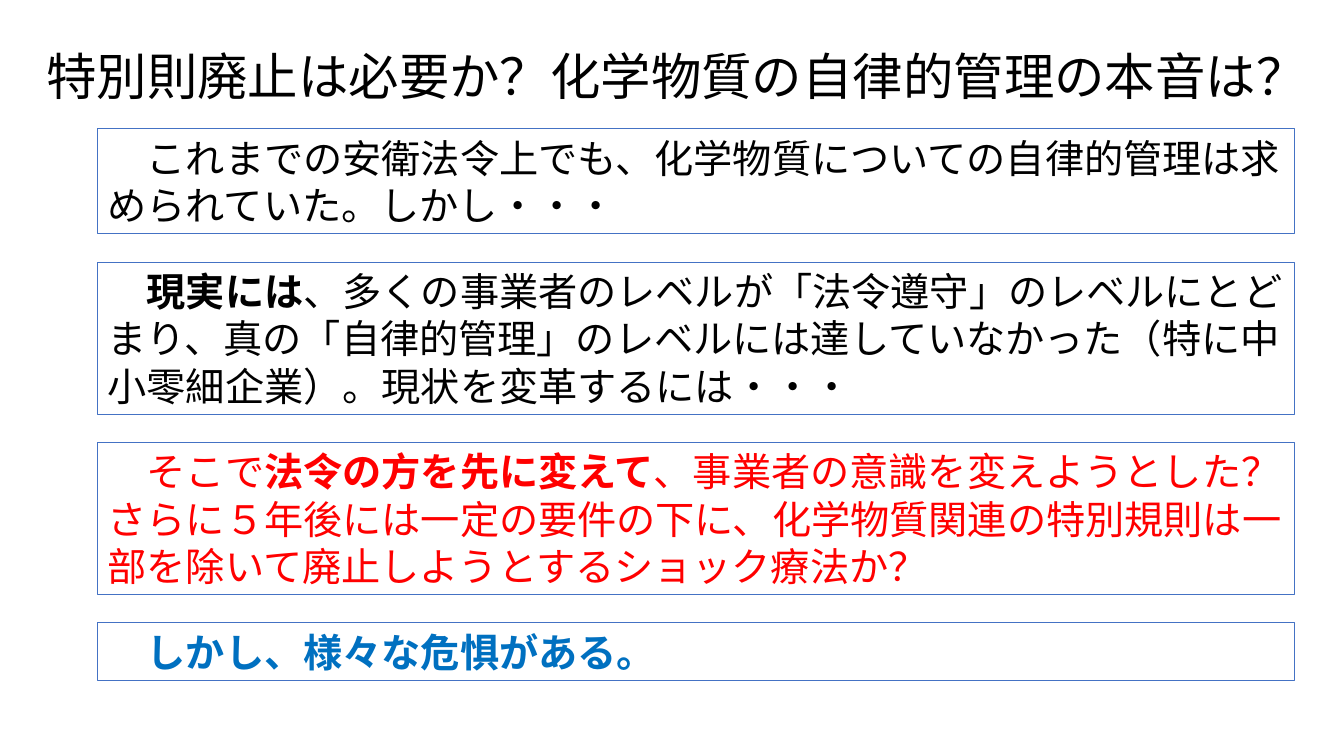
from pptx import Presentation
from pptx.dml.color import RGBColor
from pptx.enum.shapes import MSO_SHAPE
from pptx.enum.text import MSO_ANCHOR, MSO_AUTO_SIZE, PP_ALIGN
from pptx.oxml.ns import qn
from pptx.util import Inches, Pt
from lxml.etree import SubElement

THEME = {
    "font": "Noto Sans CJK JP",
    "black": RGBColor(0x00, 0x00, 0x00),
    "red": RGBColor(0xFF, 0x00, 0x00),
    "blue": RGBColor(0x00, 0x70, 0xC0),
    "border": RGBColor(0x44, 0x72, 0xC4),
    "title_size": Pt(36),
    "body_size": Pt(28),
    "body_leading": Pt(33.8),
}


def add_span(para, text, size, color, bold=False):
    span = para.add_run()
    span.text = text
    span.font.size = size
    span.font.bold = bold
    span.font.color.rgb = THEME[color]
    span.font.name = THEME["font"]
    # East Asian text takes its typeface from a separate element
    SubElement(span.font._element, qn("a:ea"), typeface=THEME["font"])


deck = Presentation()
deck.slide_width, deck.slide_height = Inches(13.33), Inches(7.5)
page = deck.slides.add_slide(deck.slide_layouts[6])

# Title
title = page.shapes.add_textbox(Inches(0.36), Inches(0.32), Inches(12.75), Inches(0.93))
title.text_frame.word_wrap = True
title.text_frame.vertical_anchor = MSO_ANCHOR.MIDDLE
para = title.text_frame.paragraphs[0]
para.line_spacing = 0.9
add_span(para, "特別則廃止は必要か？化学物質の自律的管理の本音は？", THEME["title_size"], "black")

# Argument steps: box height, text colour, (text, bold) spans
steps = [
    (1.04, "black", [
        ("　これまでの安衛法令上でも、化学物質についての自律的管理は求められていた。しかし・・・", False),
    ]),
    (1.51, "black", [
        ("　", False),
        ("現実には", True),
        ("、多くの事業者のレベルが「法令遵守」のレベルにとどまり、真の「自律的管理」のレベルには"
         "達していなかった（特に中小零細企業）。現状を変革するには・・・", False),
    ]),
    (1.51, "red", [
        ("　そこで", False),
        ("法令の方を先に変えて", True),
        ("、事業者の意識を変えようとした？さらに５年後には一定の要件の下に、化学物質関連の"
         "特別規則は一部を除いて廃止しようとするショック療法か？", False),
    ]),
    (0.57, "blue", [
        ("　", False),
        ("しかし、様々な危惧がある。", True),
    ]),
]

# Stack of outlined boxes with equal gaps
top, gap = 1.28, 0.28
for height, color, spans in steps:
    box = page.shapes.add_shape(
        MSO_SHAPE.RECTANGLE, Inches(0.97), Inches(top), Inches(11.87), Inches(height))
    box.shadow.inherit = False
    box.fill.background()
    box.line.color.rgb = THEME["border"]
    box.line.width = Pt(0.75)
    frame = box.text_frame
    frame.word_wrap = True
    frame.auto_size = MSO_AUTO_SIZE.SHAPE_TO_FIT_TEXT
    frame.vertical_anchor = MSO_ANCHOR.TOP
    para = frame.paragraphs[0]
    para.alignment = PP_ALIGN.LEFT
    para.line_spacing = THEME["body_leading"]
    for text, bold in spans:
        add_span(para, text, THEME["body_size"], color, bold)
    top += height + gap

deck.save("out.pptx")
